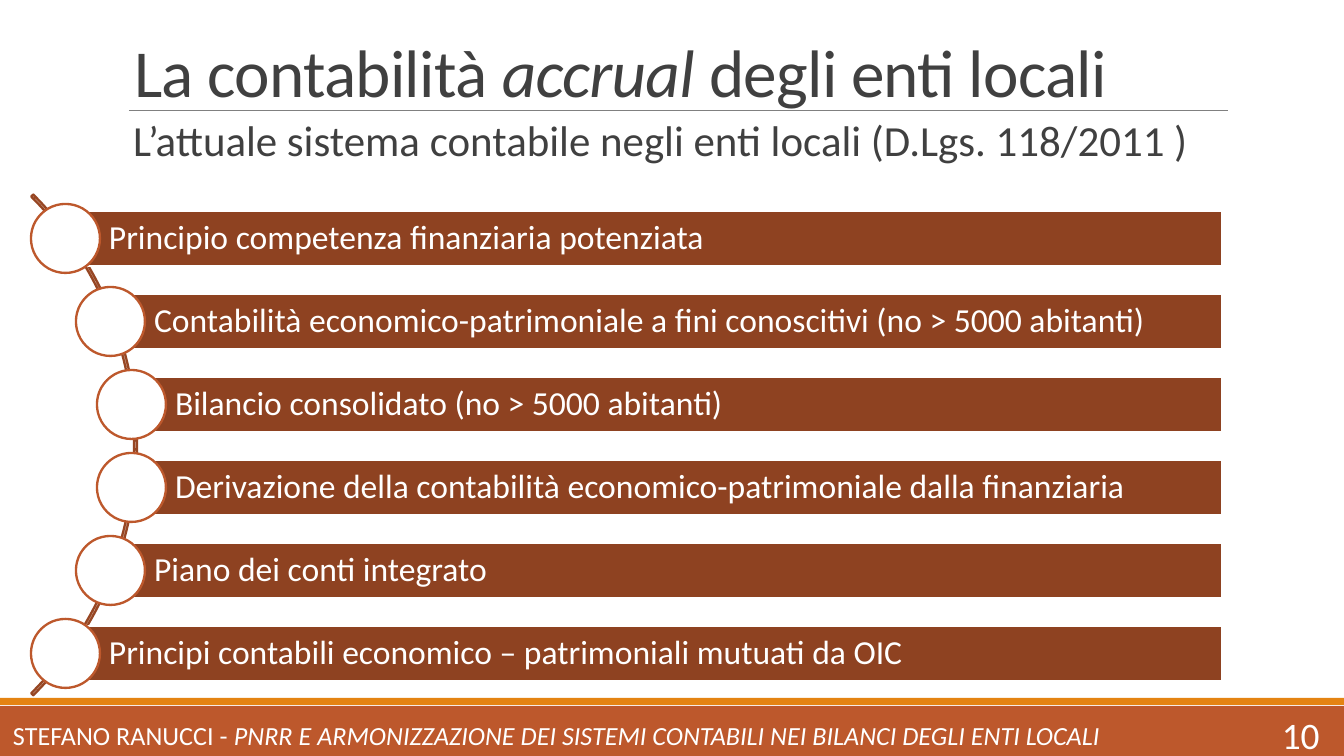
from dataclasses import dataclass

from lxml import etree
from pptx import Presentation
from pptx.dml.color import RGBColor
from pptx.enum.shapes import MSO_CONNECTOR, MSO_SHAPE
from pptx.enum.text import MSO_ANCHOR, MSO_AUTO_SIZE, PP_ALIGN
from pptx.oxml.ns import qn
from pptx.shapes.autoshape import Shape
from pptx.slide import Slide
from pptx.util import Emu, Pt

RECTANGLE = MSO_SHAPE.RECTANGLE
OVAL = MSO_SHAPE.OVAL
BLOCK_ARC = MSO_SHAPE.BLOCK_ARC
STRAIGHT = MSO_CONNECTOR.STRAIGHT
TOP, MIDDLE, BOTTOM = MSO_ANCHOR.TOP, MSO_ANCHOR.MIDDLE, MSO_ANCHOR.BOTTOM
LEFT, RIGHT = PP_ALIGN.LEFT, PP_ALIGN.RIGHT
NO_AUTOFIT = MSO_AUTO_SIZE.NONE

PX_PER_INCH = 134.4
SLIDE_WIDTH, SLIDE_HEIGHT = 1344, 756
FONT = "Calibri"
WHITE, DARK_GREY, RULE_GREY = "FFFFFF", "404040", "808080"
RUST, ORANGE, BROWN, ARC_BROWN = "BD582C", "E48312", "8E4221", "974623"

FIRST_CENTRE, ROW_PITCH = 238, 83
BAR_HEIGHT, BAR_RIGHT, BAR_INSET = 55, 1222, 44
CIRCLE_SIZE = 69


@dataclass(frozen=True)
class Box:
    left: int
    top: int
    width: int
    height: int


@dataclass(frozen=True)
class Piece:
    text: str
    italic: bool = False


@dataclass(frozen=True)
class TextStyle:
    size: int
    color: str
    anchor: MSO_ANCHOR = MIDDLE
    align: PP_ALIGN = LEFT
    line_spacing: float = 1.0
    left_inset: int = 13
    tracking: int = 0


@dataclass(frozen=True)
class Principle:
    axis: int
    text: str


PRINCIPLES = [
    Principle(65, "Principio competenza finanziaria potenziata"),
    Principle(110, "Contabilità economico-patrimoniale a fini conoscitivi (no > 5000 abitanti)"),
    Principle(131, "Bilancio consolidato (no > 5000 abitanti)"),
    Principle(131, "Derivazione della contabilità economico-patrimoniale dalla finanziaria"),
    Principle(110, "Piano dei conti integrato"),
    Principle(65, "Principi contabili economico – patrimoniali mutuati da OIC"),
]

TITLE = [Piece("La contabilità "), Piece("accrual", True), Piece(" degli enti locali")]
SUBTITLE = [Piece("L’attuale sistema contabile negli enti locali (D.Lgs. 118/2011 )")]
FOOTER = [
    Piece("STEFANO RANUCCI - "),
    Piece("PNRR E ARMONIZZAZIONE DEI SISTEMI CONTABILI NEI BILANCI DEGLI ENTI LOCALI", True),
]

TITLE_STYLE = TextStyle(36, DARK_GREY, BOTTOM, line_spacing=0.85, tracking=-40)
SUBTITLE_STYLE = TextStyle(23, DARK_GREY, TOP, line_spacing=0.9, left_inset=12)
BAR_STYLE = TextStyle(18, WHITE, line_spacing=0.9, left_inset=BAR_INSET)
FOOTER_STYLE = TextStyle(14, WHITE)
NUMBER_STYLE = TextStyle(20, WHITE, align=RIGHT)


def px(length: int) -> Emu:
    return Emu(round(length * 914400 / PX_PER_INCH))


def rgb(color: str) -> RGBColor:
    return RGBColor.from_string(color)


def emu_box(box: Box) -> tuple[Emu, Emu, Emu, Emu]:
    return px(box.left), px(box.top), px(box.width), px(box.height)


def write(shape: Shape, pieces: list[Piece], style: TextStyle) -> None:
    frame = shape.text_frame
    frame.word_wrap = True
    frame.auto_size = NO_AUTOFIT
    frame.vertical_anchor = style.anchor
    frame.margin_left = px(style.left_inset)
    paragraph = frame.paragraphs[0]
    paragraph.alignment = style.align
    paragraph.line_spacing = style.line_spacing
    for piece in pieces:
        run = paragraph.add_run()
        run.text = piece.text
        run.font.name = FONT
        run.font.size = Pt(style.size)
        run.font.italic = piece.italic
        run.font.color.rgb = rgb(style.color)
        if style.tracking:
            run.font._element.set("spc", str(style.tracking))


def add_text(slide: Slide, box: Box, pieces: list[Piece], style: TextStyle) -> None:
    write(slide.shapes.add_textbox(*emu_box(box)), pieces, style)


def add_figure(
    slide: Slide, kind: MSO_SHAPE, box: Box, fill: str | None, line: str | None = None
) -> Shape:
    figure = slide.shapes.add_shape(kind, *emu_box(box))
    figure.shadow.inherit = False
    if fill:
        figure.fill.solid()
        figure.fill.fore_color.rgb = rgb(fill)
    else:
        figure.fill.background()
    if line:
        figure.line.color.rgb = rgb(line)
        figure.line.width = Pt(1.25)
    else:
        figure.line.fill.background()
    return figure


def add_rule(slide: Slide, left: int, right: int, y: int) -> None:
    rule = slide.shapes.add_connector(STRAIGHT, px(left), px(y), px(right), px(y))
    rule.line.color.rgb = rgb(RULE_GREY)
    rule.line.width = Pt(0.5)
    etree.SubElement(rule._element.spPr, qn("a:effectLst"))


def add_arc(slide: Slide) -> None:
    arc = add_figure(slide, BLOCK_ARC, Box(-571, 91, 708, 708), None, ARC_BROWN)
    for index, value in enumerate((189, 27, 0.004)):
        arc.adjustments[index] = value


def add_principle(slide: Slide, principle: Principle, centre: int) -> None:
    bar_box = Box(
        principle.axis, centre - BAR_HEIGHT // 2, BAR_RIGHT - principle.axis, BAR_HEIGHT
    )
    bar = add_figure(slide, RECTANGLE, bar_box, BROWN, WHITE)
    write(bar, [Piece(principle.text)], BAR_STYLE)
    radius = CIRCLE_SIZE // 2
    circle_box = Box(principle.axis - radius, centre - radius, CIRCLE_SIZE, CIRCLE_SIZE)
    add_figure(slide, OVAL, circle_box, WHITE, RUST)


def main() -> None:
    presentation = Presentation()
    presentation.slide_width = px(SLIDE_WIDTH)
    presentation.slide_height = px(SLIDE_HEIGHT)
    slide = presentation.slides.add_slide(presentation.slide_layouts[5])

    add_figure(slide, RECTANGLE, Box(0, 706, SLIDE_WIDTH, 50), RUST)
    add_figure(slide, RECTANGLE, Box(0, 698, SLIDE_WIDTH, 7), ORANGE)
    add_rule(slide, 129, 1228, 111)

    title = slide.shapes.title
    title.left, title.top, title.width, title.height = emu_box(Box(121, 32, 1109, 86))
    write(title, TITLE, TITLE_STYLE)
    add_text(slide, Box(121, 113, 1109, 60), SUBTITLE, SUBTITLE_STYLE)
    add_text(slide, Box(0, 713, 1230, 44), FOOTER, FOOTER_STYLE)
    add_text(slide, Box(1188, 713, 145, 44), [Piece("10")], NUMBER_STYLE)

    add_arc(slide)
    for row, principle in enumerate(PRINCIPLES):
        add_principle(slide, principle, FIRST_CENTRE + row * ROW_PITCH)

    presentation.save("out.pptx")


if __name__ == "__main__":
    main()
